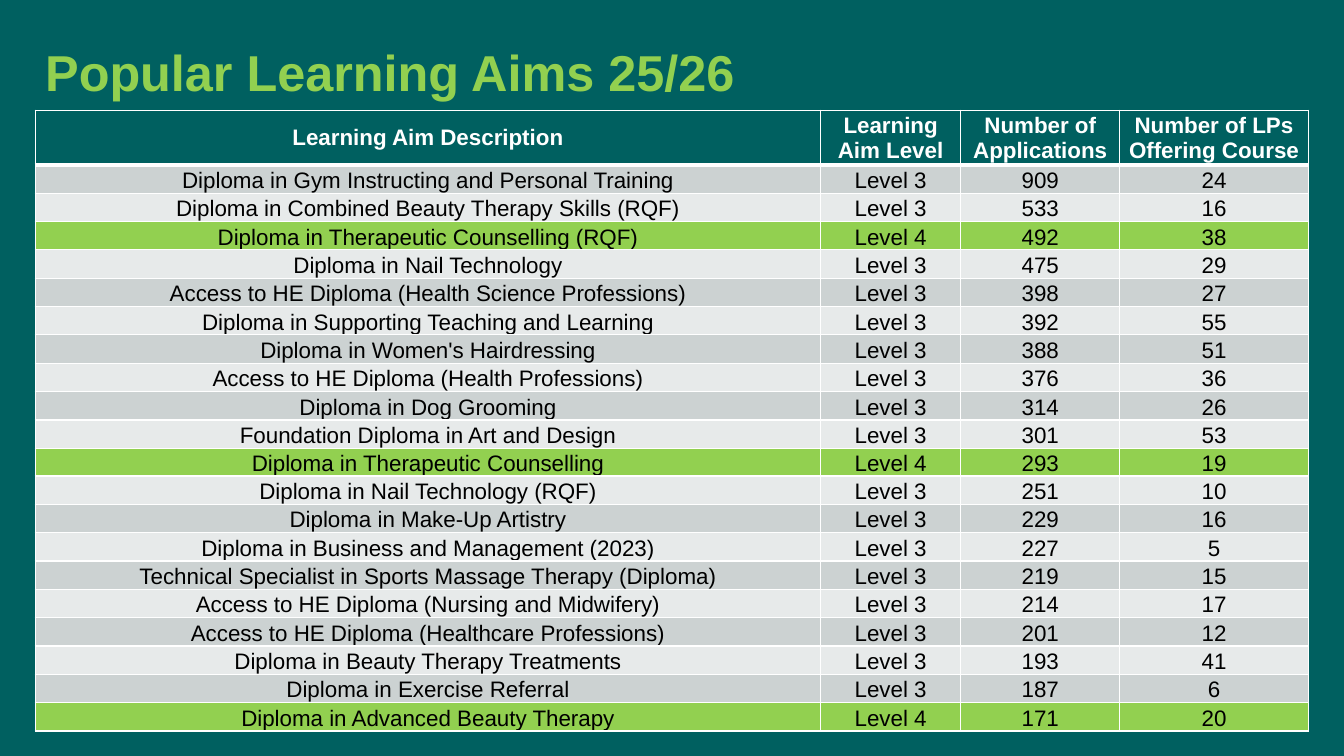
from lxml.etree import SubElement
from pptx import Presentation
from pptx.dml.color import RGBColor
from pptx.enum.text import MSO_ANCHOR, PP_ALIGN
from pptx.oxml.ns import qn
from pptx.util import Cm, Pt

TEAL = RGBColor(0x00, 0x60, 0x60)
LIME = RGBColor(0x92, 0xD0, 0x50)
DARK_BAND = RGBColor(0xCC, 0xD2, 0xD2)
LIGHT_BAND = RGBColor(0xE7, 0xEA, 0xEA)
WHITE = RGBColor(0xFF, 0xFF, 0xFF)
BLACK = RGBColor(0x00, 0x00, 0x00)

HEADINGS = (
    "Learning Aim Description",
    "Learning Aim Level",
    "Number of Applications",
    "Number of LPs Offering Course",
)
AIMS = [
    ("Diploma in Gym Instructing and Personal Training", 3, 909, 24),
    ("Diploma in Combined Beauty Therapy Skills (RQF)", 3, 533, 16),
    ("Diploma in Therapeutic Counselling (RQF)", 4, 492, 38),
    ("Diploma in Nail Technology", 3, 475, 29),
    ("Access to HE Diploma (Health Science Professions)", 3, 398, 27),
    ("Diploma in Supporting Teaching and Learning", 3, 392, 55),
    ("Diploma in Women's Hairdressing", 3, 388, 51),
    ("Access to HE Diploma (Health Professions)", 3, 376, 36),
    ("Diploma in Dog Grooming", 3, 314, 26),
    ("Foundation Diploma in Art and Design", 3, 301, 53),
    ("Diploma in Therapeutic Counselling", 4, 293, 19),
    ("Diploma in Nail Technology (RQF)", 3, 251, 10),
    ("Diploma in Make-Up Artistry", 3, 229, 16),
    ("Diploma in Business and Management (2023)", 3, 227, 5),
    ("Technical Specialist in Sports Massage Therapy (Diploma)", 3, 219, 15),
    ("Access to HE Diploma (Nursing and Midwifery)", 3, 214, 17),
    ("Access to HE Diploma (Healthcare Professions)", 3, 201, 12),
    ("Diploma in Beauty Therapy Treatments", 3, 193, 41),
    ("Diploma in Exercise Referral", 3, 187, 6),
    ("Diploma in Advanced Beauty Therapy", 4, 171, 20),
]
COLUMN_WIDTHS = (Cm(19.79), Cm(3.53), Cm(4.01), Cm(4.75))
TABLE_HEIGHT = Cm(15.5)
HEADING_HEIGHT = Cm(1.27)
SHORT_ROW = 11
SHORT_HEIGHT = Cm(0.65)
AIM_HEIGHT = (TABLE_HEIGHT - HEADING_HEIGHT - SHORT_HEIGHT) // (len(AIMS) - 1)
HIGHLIGHTED_LEVEL = 4


def write_text(frame, text, *, size=16, color=BLACK, bold=False,
               align=PP_ALIGN.CENTER, spacing=None):
    frame.word_wrap = True
    paragraph = frame.paragraphs[0]
    paragraph.alignment = align
    paragraph.line_spacing = spacing
    run = paragraph.add_run()
    run.text = text
    run.font.name = "Arial"
    run.font.size = Pt(size)
    run.font.bold = bold
    run.font.color.rgb = color


def add_borders(cell, color, **widths):
    properties = cell._tc.get_or_add_tcPr()
    for side, width in widths.items():
        border = SubElement(properties, qn(f"a:ln{side}"), w=str(Pt(width)))
        fill = SubElement(border, qn("a:solidFill"))
        SubElement(fill, qn("a:srgbClr"), val=str(color))


def fill_cell(cell, text, fill, anchor, **text_format):
    cell.margin_left = cell.margin_right = cell.margin_top = Cm(0.02)
    cell.margin_bottom = 0
    cell.vertical_anchor = anchor
    cell.fill.solid()
    cell.fill.fore_color.rgb = fill
    write_text(cell.text_frame, text, **text_format)


def add_title(slide, title):
    heading = slide.shapes.add_textbox(Cm(0.89), Cm(1.04), Cm(29.21), Cm(1.73))
    heading.text_frame.vertical_anchor = MSO_ANCHOR.MIDDLE
    write_text(heading.text_frame, title, size=36, color=LIME, bold=True,
               align=PP_ALIGN.LEFT, spacing=0.9)


def row_fill(row_number, level):
    if level == HIGHLIGHTED_LEVEL:
        return LIME
    return DARK_BAND if row_number % 2 else LIGHT_BAND


def add_aims_table(slide):
    aims_table = slide.shapes.add_table(
        len(AIMS) + 1, len(HEADINGS), Cm(0.89), Cm(2.78),
        sum(COLUMN_WIDTHS), TABLE_HEIGHT).table
    for column, width in zip(aims_table.columns, COLUMN_WIDTHS):
        column.width = width
    for row in aims_table.rows:
        row.height = AIM_HEIGHT
    aims_table.rows[0].height = HEADING_HEIGHT
    aims_table.rows[SHORT_ROW].height = SHORT_HEIGHT

    for column_number, heading in enumerate(HEADINGS):
        cell = aims_table.cell(0, column_number)
        add_borders(cell, WHITE, L=1, R=1, T=1, B=3)
        fill_cell(cell, heading, TEAL, MSO_ANCHOR.MIDDLE, color=WHITE, bold=True)

    for row_number, (aim, level, applications, providers) in enumerate(AIMS, 1):
        fill = row_fill(row_number, level)
        values = (aim, f"Level {level}", str(applications), str(providers))
        for column_number, value in enumerate(values):
            fill_cell(aims_table.cell(row_number, column_number), value, fill,
                      MSO_ANCHOR.BOTTOM)


def main():
    presentation = Presentation()
    presentation.slide_width = Cm(33.87)
    presentation.slide_height = Cm(19.05)
    slide = presentation.slides.add_slide(presentation.slide_layouts[6])
    slide.background.fill.solid()
    slide.background.fill.fore_color.rgb = TEAL
    add_title(slide, "Popular Learning Aims 25/26")
    add_aims_table(slide)
    presentation.save("out.pptx")


if __name__ == "__main__":
    main()
